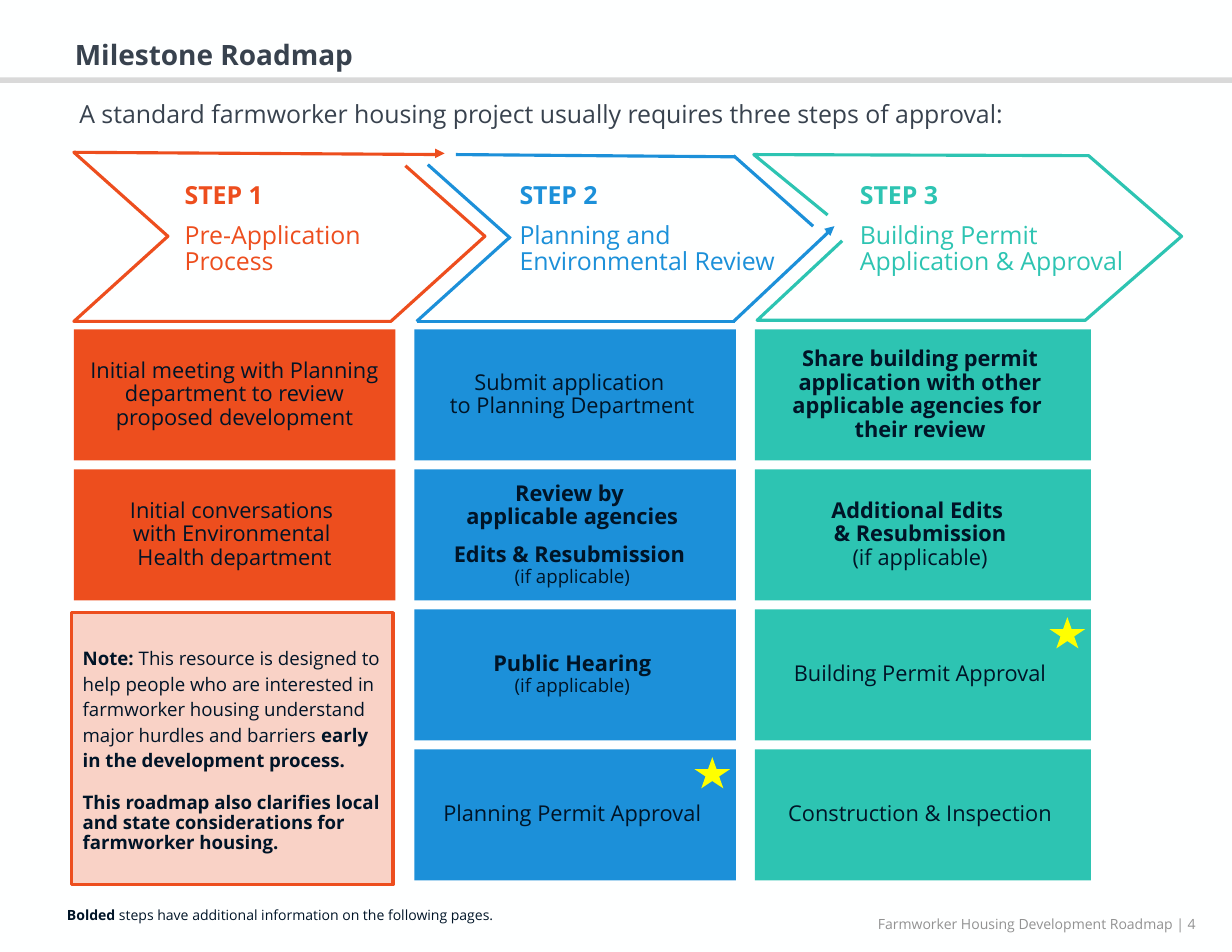
import pptx
import pptx.dml.color
import pptx.enum.shapes
import pptx.enum.text
import pptx.oxml.ns
import pptx.util
from lxml import etree
from pptx.dml.color import RGBColor
from pptx.enum.shapes import MSO_CONNECTOR, MSO_SHAPE
from pptx.enum.text import MSO_ANCHOR, PP_ALIGN
from pptx.util import Inches

FONT = "Open Sans"
PAPER = RGBColor(0xFE, 0xFF, 0xFF)
SLATE = RGBColor(0x38, 0x42, 0x4E)
INK = RGBColor(0x00, 0x14, 0x27)
ORANGE = RGBColor(0xED, 0x4E, 0x1E)
BLUE = RGBColor(0x1C, 0x90, 0xD9)
TEAL = RGBColor(0x2D, 0xC4, 0xB2)
YELLOW = RGBColor(0xFF, 0xFF, 0x00)
RULE_GRAY = RGBColor(0xD9, 0xD9, 0xD9)
FOOTER_GRAY = RGBColor(0x92, 0x92, 0x92)

BOX_TOP, BOX_HEIGHT, ROW_PITCH = 2.94, 1.17, 1.25


def write_text(frame, paragraphs, size=14, color=INK, align=PP_ALIGN.LEFT,
               spacing=0.9, after=0):
    """Fill a frame; each paragraph is a list of (text, bold[, size]) runs."""
    frame.word_wrap = True
    for index, runs in enumerate(paragraphs):
        paragraph = frame.paragraphs[0] if index == 0 else frame.add_paragraph()
        paragraph.alignment = align
        paragraph.line_spacing = spacing
        paragraph.space_after = pptx.util.Pt(after)
        for content, bold, *own_size in runs:
            for line_number, line in enumerate(content.split("\n")):
                if line_number:
                    paragraph.add_line_break()
                if not line:
                    continue
                run = paragraph.add_run()
                run.text = line
                run.font.name = FONT
                run.font.size = pptx.util.Pt(own_size[0] if own_size else size)
                run.font.bold = bold
                run.font.color.rgb = color


def add_xml(parent, tag, **attributes):
    return etree.SubElement(parent, pptx.oxml.ns.qn(tag), **attributes)


class Roadmap:
    """Draws the elements of the roadmap on one slide."""

    line_width = pptx.util.Pt(2)

    def __init__(self, slide):
        self.slide = slide
        self.shapes = slide.shapes
        slide.background.fill.solid()
        slide.background.fill.fore_color.rgb = PAPER

    def label(self, left, top, width, height, paragraphs, **text_format):
        box = self.shapes.add_textbox(
            Inches(left), Inches(top), Inches(width), Inches(height))
        write_text(box.text_frame, paragraphs, **text_format)

    def block(self, kind, left, top, width, height, color):
        shape = self.shapes.add_shape(
            kind, Inches(left), Inches(top), Inches(width), Inches(height))
        shape.shadow.inherit = False
        shape.fill.solid()
        shape.fill.fore_color.rgb = color
        shape.line.fill.background()
        return shape

    def milestone(self, left, row, width, color, paragraphs, after=0, inset=0.05):
        box = self.block(MSO_SHAPE.RECTANGLE, left, BOX_TOP + row * ROW_PITCH,
                         width, BOX_HEIGHT, color)
        frame = box.text_frame
        frame.vertical_anchor = MSO_ANCHOR.MIDDLE
        frame.margin_left = Inches(inset)
        write_text(frame, paragraphs, align=PP_ALIGN.CENTER, after=after)

    def star(self, column_right, row):
        self.block(MSO_SHAPE.STAR_5_POINT, column_right - 0.37,
                   BOX_TOP + row * ROW_PITCH + 0.07, 0.32, 0.28, YELLOW)

    def note(self, left, top, width, height, color, paragraphs):
        box = self.block(MSO_SHAPE.RECTANGLE, left, top, width, height, color)
        solid_color = box.fill._xPr.find(".//" + pptx.oxml.ns.qn("a:srgbClr"))
        add_xml(solid_color, "a:alpha", val="25000")
        self.stroke(box.line, color)
        frame = box.text_frame
        frame.vertical_anchor = MSO_ANCHOR.MIDDLE
        write_text(frame, paragraphs, size=12)
        opening, closing = frame.paragraphs
        opening.line_spacing = pptx.util.Pt(16.4)
        closing.space_before = pptx.util.Pt(14)

    def stroke(self, line, color):
        line.color.rgb = color
        line.width = self.line_width

    def outline(self, points, color):
        start, *rest = [(Inches(x), Inches(y)) for x, y in points]
        builder = self.shapes.build_freeform(*start)
        builder.add_line_segments(rest, close=False)
        shape = builder.convert_to_shape()
        shape.shadow.inherit = False
        shape.fill.background()
        self.stroke(shape.line, color)

    def line(self, start, end, color, arrow=False):
        connector = self.shapes.add_connector(
            MSO_CONNECTOR.STRAIGHT, *(Inches(value) for value in start + end))
        self.stroke(connector.line, color)
        if arrow:
            add_xml(connector.line._get_or_add_ln(), "a:tailEnd", type="triangle")
        add_xml(connector._element.spPr, "a:effectLst")


def main():
    deck = pptx.Presentation()
    deck.slide_width, deck.slide_height = Inches(11), Inches(8.5)
    page = Roadmap(deck.slides.add_slide(deck.slide_layouts[6]))

    page.label(0.57, 0.32, 9.08, 0.4, [[("Milestone Roadmap", True)]],
               size=18, color=SLATE)
    page.block(MSO_SHAPE.RECTANGLE, 0, 0.69, 11, 0.05, RULE_GRAY)
    page.label(0.61, 0.86, 9.82, 0.37, [[(
        "A standard farmworker housing project usually requires "
        "three steps of approval:", False)]], size=16, color=SLATE)

    page.outline([(3.62, 1.48), (4.33, 2.11), (3.49, 2.87), (0.66, 2.87),
                  (1.5, 2.11), (0.66, 1.36), (3.89, 1.38)], ORANGE)
    page.line((3.89, 1.37), (3.97, 1.37), ORANGE, arrow=True)
    for start, end in [((4.07, 1.38), (6.56, 1.4)), ((3.72, 2.87), (6.56, 2.87)),
                       ((3.82, 1.47), (4.56, 2.13)), ((3.72, 2.87), (4.55, 2.12)),
                       ((6.55, 2.87), (7.4, 2.07)), ((6.55, 1.39), (7.26, 2.02))]:
        page.line(start, end, BLUE)
    page.line((7.38, 2.08), (7.45, 2.02), BLUE, arrow=True)
    page.outline([(7.39, 1.92), (6.73, 1.38), (9.72, 1.39), (10.55, 2.11),
                  (9.69, 2.86), (6.76, 2.86), (7.52, 2.15)], TEAL)

    if_applicable = "(if applicable)"
    # Each milestone: its paragraphs, and the space after them in points.
    steps = [
        (1.55, 2.45, "Pre-Application Process", ORANGE, 0.66, 2.87, 0.1, [
            ([[("Initial meeting with Planning department to review "
                "proposed development", False)]], 0),
            ([[("Initial conversations \nwith Environmental \n"
                "Health department", False)]], 0),
        ]),
        (4.54, 2.51, "Planning and \nEnvironmental Review", BLUE, 3.7, 2.87, 0.05, [
            ([[("Submit application \nto Planning Department", False)]], 0),
            ([[("Review by \napplicable agencies", True)],
              [("Edits & Resubmission \n", True), (if_applicable, False, 12)]], 9),
            ([[("Public Hearing\n", True), (if_applicable, False, 12)]], 6),
            ([[("Planning Permit Approval", False)]], 6),
        ]),
        (7.58, 2.63, "Building Permit\nApplication & Approval", TEAL, 6.74, 3, 0.05, [
            ([[("Share building permit application with other applicable "
                "agencies for \ntheir review", True)]], 0),
            ([[("Additional Edits \n& Resubmission\n", True),
               (if_applicable, False)]], 3),
            ([[("Building Permit Approval", False)]], 6),
            ([[("Construction & Inspection", False)]], 6),
        ]),
    ]
    for number, (label_left, label_width, phase, color, left, width, inset,
                 milestones) in enumerate(steps, start=1):
        page.label(label_left, 1.59, label_width, 0.94,
                   [[(f"STEP {number}", True)], [(phase, False)]],
                   size=16, color=color, spacing=pptx.util.Pt(16.6), after=9)
        for row, (paragraphs, after) in enumerate(milestones):
            page.milestone(left, row, width, color, paragraphs, after, inset)
    page.star(6.57, 3)
    page.star(9.74, 2)

    page.note(0.64, 5.47, 2.87, 2.43, ORANGE, [
        [("Note: ", True),
         ("This resource is designed to help people who are interested in farmworker "
          "housing understand major hurdles and barriers ", False),
         ("early in the development process.", True)],
        [("This roadmap also clarifies local and state considerations for "
          "farmworker housing.", True)],
    ])
    page.label(0.5, 8.06, 6.76, 0.25, [[
        ("Bolded ", True),
        ("steps have additional information on the following pages.", False)]], size=9)
    page.label(7.74, 8.14, 3.24, 0.25,
               [[("Farmworker Housing Development Roadmap | 4", False)]],
               size=9, color=FOOTER_GRAY)

    deck.save("out.pptx")


if __name__ == "__main__":
    main()
